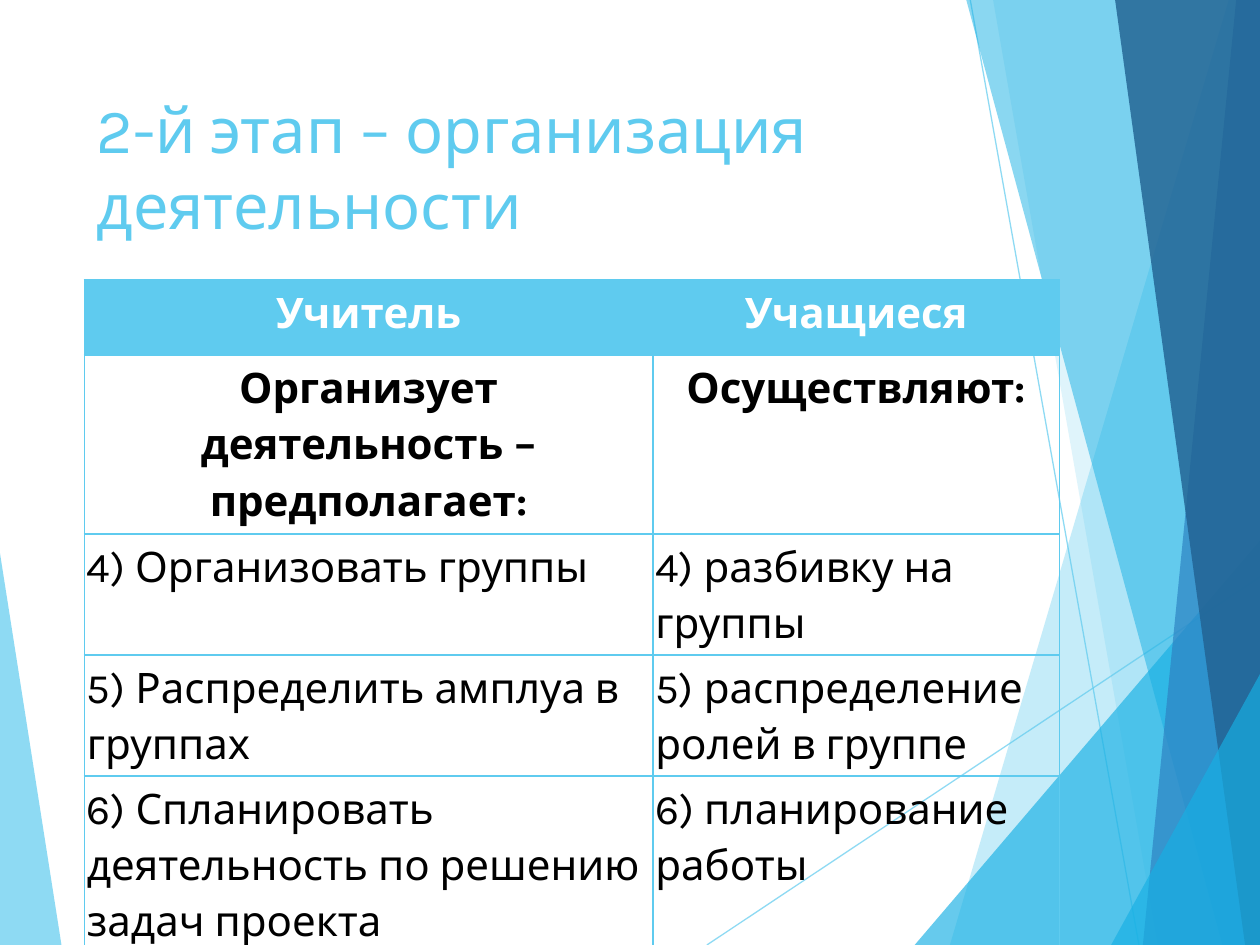
from pptx import Presentation
from pptx.dml.color import RGBColor
from pptx.enum.shapes import MSO_CONNECTOR as Link
from pptx.enum.text import MSO_ANCHOR as Anchor, PP_ALIGN as Align
from pptx.oxml.ns import qn
from pptx.util import Cm, Pt
from lxml.etree import SubElement as Sub

SKY = RGBColor(0x5F, 0xCB, 0xEF)
CYAN = RGBColor(0x17, 0xB0, 0xE4)
BLUE = RGBColor(0x2E, 0x83, 0xC3)
NAVY = RGBColor(0x22, 0x62, 0x92)
WHITE = RGBColor(0xFF, 0xFF, 0xFF)
BLACK = RGBColor(0, 0, 0)
FONT = "Karla"
WIDE, HIGH = 25.4, 19.05

RAYS = [
    ((14.25, HIGH), (25.43, 11.61)),
    ((19.56, 0), (22.96, HIGH)),
]
SHARDS = [
    (SKY, 70, [(0, 11.15), (1.24, HIGH), (0, HIGH)]),
    (SKY, 36, [(24.77, 0), (19.15, HIGH), (WIDE, HIGH), (WIDE, 0)]),
    (SKY, 20, [(20.02, 0), (23.34, HIGH), (WIDE, HIGH), (WIDE, 0)]),
    (CYAN, 66, [(18.44, HIGH), (WIDE, 10.9), (WIDE, HIGH)]),
    (CYAN, 50, [(19.48, 0), (24.64, HIGH), (WIDE, HIGH), (WIDE, 0)]),
    (BLUE, 70, [(24.92, 0), (23.04, HIGH), (WIDE, HIGH), (WIDE, 0)]),
    (NAVY, 82, [(22.48, 0), (25.1, HIGH), (WIDE, HIGH), (WIDE, 0)]),
    (CYAN, 66, [(22.4, HIGH), (WIDE, 13.59), (WIDE, HIGH)]),
]
ROWS = [
    ("Учитель", "Учащиеся"),
    ("Организует деятельность – предполагает:", "Осуществляют:"),
    ("4) Организовать группы", "4) разбивку на группы"),
    ("5) Распределить амплуа в группах", "5) распределение ролей в группе"),
    ("6) Спланировать деятельность по решению задач проекта",
     "6) планирование работы"),
]
TALL = [1.52, 1.22, 1.98, 1.98, 3.66]
SPAN = [11.46, 8.2]


def fade(shape, pct):
    """Set the opacity of the first colour in a shape, in percent."""
    tint = next(shape._element.spPr.iter(qn("a:srgbClr")))
    Sub(tint, qn("a:alpha"), val=str(pct * 1000))


def write(para, text, size, color, bold=False):
    """Add one styled run to a paragraph."""
    run = para.add_run()
    run.text = text
    font = run.font
    font.name, font.size, font.bold = FONT, Pt(size), bold
    font.color.rgb = color


def shard(slide, left, top, color, pct, dots):
    """Draw one translucent polygon."""
    spots = [(Cm(left + x), Cm(top + y)) for x, y in dots]
    pen = slide.shapes.build_freeform(*spots[0])
    pen.add_line_segments(spots[1:], close=True)
    shape = pen.convert_to_shape()
    shape.shadow.inherit = False
    shape.fill.solid()
    shape.fill.fore_color.rgb = color
    shape.line.fill.background()
    fade(shape, pct)


def ray(slide, left, top, tail, tip):
    """Draw one thin translucent line."""
    ends = [Cm(n) for x, y in (tail, tip) for n in (left + x, top + y)]
    line = slide.shapes.add_connector(Link.STRAIGHT, *ends)
    line.line.color.rgb = SKY
    line.line.width = Pt(0.75)
    fade(line, 70)
    Sub(line._element.spPr, qn("a:effectLst"))


def decor(slide, left, top):
    """Draw the faceted backdrop."""
    shard(slide, left, top, *SHARDS[0])
    for ends in RAYS:
        ray(slide, left, top, *ends)
    for part in SHARDS[1:]:
        shard(slide, left, top, *part)


def title(slide, left, top, wide, high):
    """Place the heading."""
    box = slide.shapes.add_textbox(Cm(left), Cm(top), Cm(wide), Cm(high))
    frame = box.text_frame
    frame.word_wrap = True
    frame.vertical_anchor = Anchor.TOP
    write(frame.paragraphs[0], "2-й этап – организация деятельности", 36, SKY)


def edge(cell):
    """Outline a cell on all four sides."""
    props = cell._tc.get_or_add_tcPr()
    for side in ("lnL", "lnR", "lnT", "lnB"):
        line = Sub(props, qn("a:" + side), w=str(Pt(1)))
        Sub(Sub(line, qn("a:solidFill")), qn("a:srgbClr"), val=str(SKY))


def fill(cell, text, row):
    """Style one cell by its row and write its text."""
    edge(cell)
    if row == 0:
        cell.fill.solid()
        cell.fill.fore_color.rgb = SKY
    else:
        cell.fill.background()
    cell.margin_left = cell.margin_right = Cm(0.05)
    cell.margin_top = cell.margin_bottom = Cm(0.05)
    para = cell.text_frame.paragraphs[0]
    para.line_spacing = 1.15
    para.alignment = Align.CENTER if row < 2 else Align.LEFT
    write(para, text, 24, BLACK if row else WHITE, row < 2)


def roles(slide, left, top):
    """Place the table of teacher and pupil roles."""
    grid = slide.shapes.add_table(len(ROWS), len(SPAN), Cm(left), Cm(top),
                                  Cm(sum(SPAN)), Cm(sum(TALL))).table
    grid.first_row = grid.horz_banding = False
    for col, wide in zip(grid.columns, SPAN):
        col.width = Cm(wide)
    for r, (high, texts) in enumerate(zip(TALL, ROWS)):
        grid.rows[r].height = Cm(high)
        for c, text in enumerate(texts):
            fill(grid.cell(r, c), text, r)


def main():
    """Build and save the slide."""
    deck = Presentation()
    deck.slide_width, deck.slide_height = Cm(WIDE), Cm(HIGH)
    slide = deck.slides.add_slide(deck.slide_layouts[6])
    decor(slide, 0, 0)
    title(slide, 1.7, 1.7, 17.63, 3.66)
    roles(slide, 1.7, 5.64)
    deck.save("out.pptx")


if __name__ == "__main__":
    main()
